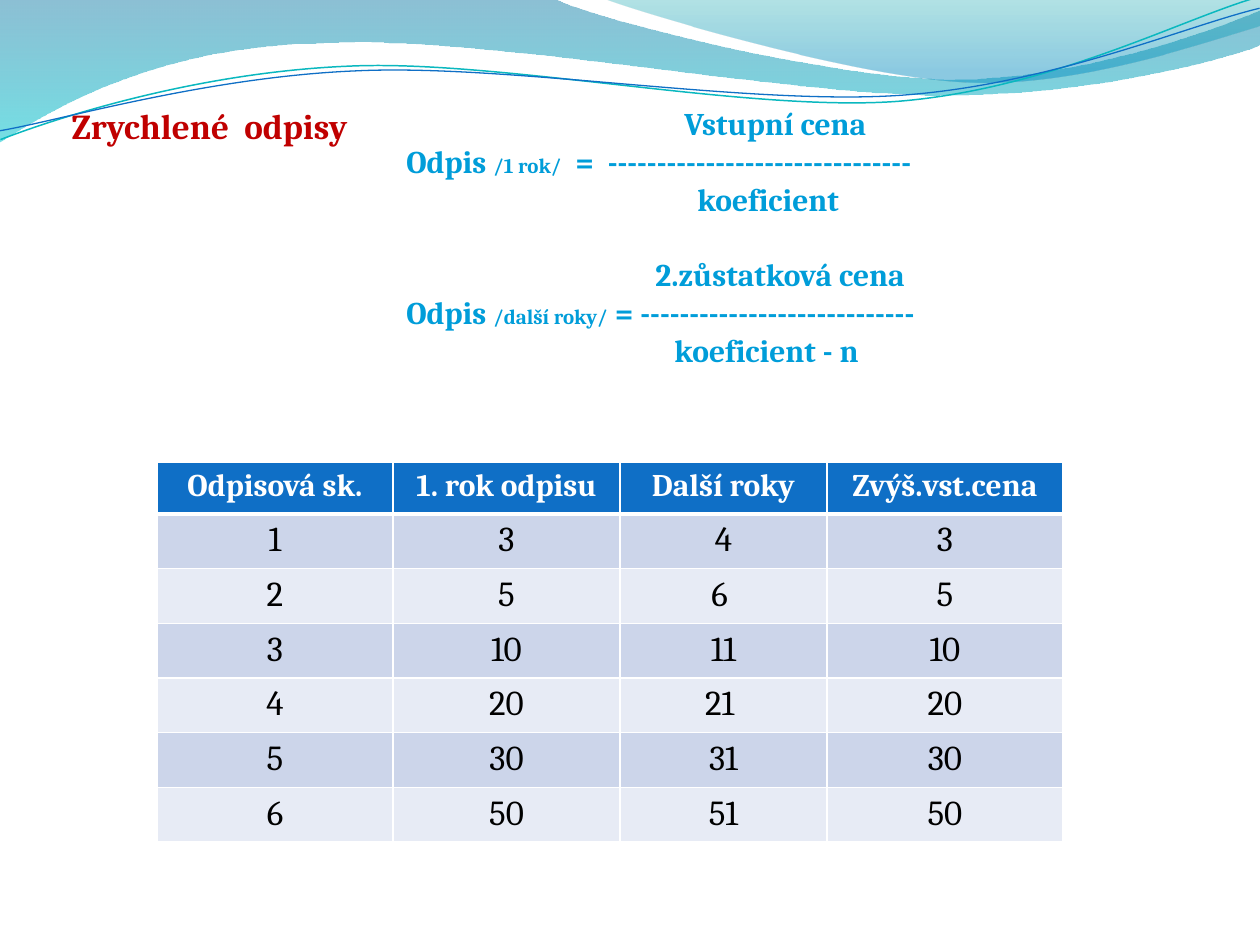
from lxml.etree import SubElement
from pptx import Presentation
from pptx.dml.color import RGBColor
from pptx.enum.text import MSO_ANCHOR, MSO_AUTO_SIZE, PP_ALIGN
from pptx.oxml.ns import qn
from pptx.util import Pt

FONT = "Cambria"
WHITE, BLACK, RED, AZURE, BLUE = "FFFFFF", "000000", "C00000", "009DD9", "0F6FC6"
BANDS = ("CCD5EA", "E7EBF5")

# Each step is one point (straight) or three points (Bezier curve).
BANNERS = [
    {"steps": [[(0, 0)], [(554, -1)],
               [(600, 21), (837, 79), (955, 79)], [(1075, 79), (1207, 33), (1260, 11)],
               [(1261, 45)],
               [(1239, 55), (1096, 96), (940, 95)], [(784, 95), (481, 35), (324, 43)],
               [(163, 45), (58, 105), (-1, 142)], [(0, 0)]],
     "stops": [(0, "0074A1", 45), (1, "00C6CF", 55)]},
    {"steps": [[(604, -1)],
               [(642, 14), (859, 78), (969, 82)], [(1079, 87), (1211, 40), (1260, 26)],
               [(1260, 0)], [(604, -1)]],
     "stops": [(0, "00A1A9", 30), (0.8, "008BBF", 45)]},
]
WAVE_LINES = [
    {"steps": [[(-2, 110)], [(58, 90), (199, 52), (350, 53)],
               [(499, 53), (745, 118), (896, 114)], [(1049, 109), (1184, 45), (1260, 27)]],
     "color": "0AB8BF", "width": 0.85},
    {"steps": [[(-2, 101)], [(57, 94), (207, 57), (357, 58)],
               [(509, 58), (750, 112), (902, 108)], [(1052, 104), (1188, 52), (1262, 38)]],
     "color": BLUE, "width": 0.75},
]
WAVE_ROTATION = 357.3

TITLE = "Zrychlené  odpisy"
# Indent in px, space before in points, runs of (text, size)
FORMULAS = [
    (278, 0, [("Vstupní cena", 18)]),
    (0, 0, [("Odpis ", 18), ("/1 rok/", 12), ("  =  " + "-" * 31, 18)]),
    (291, 0, [("koeficient", 18)]),
    (249, 21.6, [("2.zůstatková cena", 18)]),
    (0, 0, [("Odpis ", 18), ("/další roky/", 12), (" = " + "-" * 28, 18)]),
    (268, 0, [("koeficient - n", 18)]),
]

HEADER = ["Odpisová sk.", "1. rok odpisu", "Další roky", "Zvýš.vst.cena"]
COEFFICIENTS = [
    ("1", "3", "4", "3"),
    ("2", "5", "6 ", "5"),
    ("3", "10", "11", "10"),
    ("4", "20", "21 ", "20"),
    ("5", "30", "31", "30"),
    ("6", "50", "51", "50"),
]
COLUMN_WIDTHS = (236, 227, 207, 236)
HEADER_HEIGHT, ROW_HEIGHT = 52, 54


def px(value):
    return round(value * 914400 / 126)


def rgb(color):
    return RGBColor.from_string(color)


def style(run, size, color, bold=True):
    run.font.name, run.font.size, run.font.bold = FONT, Pt(size), bold
    run.font.color.rgb = rgb(color)


def add_outline(slide, steps, close):
    """Build a freeform, then merge the points of each three-point step into a curve."""
    start, *others = [(px(x), px(y)) for step in steps for x, y in step]
    builder = slide.shapes.build_freeform(*start)
    builder.add_line_segments(others, close=close)
    shape = builder.convert_to_shape()
    shape.shadow.inherit = False
    segments = iter(shape.element.xpath(".//a:path/a:lnTo"))
    for step in steps[1:]:
        first, *rest = [next(segments) for _ in step]
        if rest:
            curve = first.makeelement(qn("a:cubicBezTo"))
            first.addprevious(curve)
            for segment in (first, *rest):
                curve.append(segment[0])
                segment.getparent().remove(segment)
    return shape


def add_banner(slide, steps, stops):
    shape = add_outline(slide, steps, close=True)
    shape.line.fill.background()
    shape.fill.gradient()
    shape.fill.gradient_angle = 270
    for stop, (position, color, _) in zip(shape.fill.gradient_stops, stops):
        stop.position, stop.color.rgb = position, rgb(color)
    colors = shape.element.xpath("./p:spPr//a:gs/a:srgbClr")
    for element, (_, _, opacity) in zip(colors, stops):
        SubElement(element, qn("a:alpha"), val=str(opacity * 1000))


def add_wave_line(slide, steps, color, width):
    shape = add_outline(slide, steps, close=False)
    shape.rotation = WAVE_ROTATION
    shape.fill.background()
    shape.line.color.rgb, shape.line.width = rgb(color), Pt(width)


def place_title(title):
    title.left, title.top, title.width, title.height = px(59), px(98), px(318), px(55)
    frame = title.text_frame
    frame.text = TITLE
    frame.word_wrap, frame.auto_size = True, MSO_AUTO_SIZE.NONE
    frame.vertical_anchor = MSO_ANCHOR.TOP
    frame.paragraphs[0].alignment = PP_ALIGN.LEFT
    style(frame.paragraphs[0].runs[0], 20, RED)
    title.element.getparent().append(title.element)  # in front of the waves


def add_formulas(slide):
    frame = slide.shapes.add_textbox(px(394), px(98), px(581), px(280)).text_frame
    frame.word_wrap = True
    for index, (indent, space, runs) in enumerate(FORMULAS):
        paragraph = frame.add_paragraph() if index else frame.paragraphs[0]
        paragraph.space_before = Pt(space)
        properties = paragraph._p.get_or_add_pPr()
        properties.set("marL", str(px(indent)))
        properties.set("indent", "0")
        for text, size in runs:
            run = paragraph.add_run()
            run.text = text
            style(run, size, AZURE)


def set_borders(cell, top, bottom):
    properties = cell._tc.get_or_add_tcPr()
    for side, width in (("L", 1), ("R", 1), ("T", top), ("B", bottom)):
        line = SubElement(properties, qn(f"a:ln{side}"), w=str(Pt(width)))
        SubElement(SubElement(line, qn("a:solidFill")), qn("a:srgbClr"), val=WHITE)


def add_coefficients(slide):
    rows = [HEADER, *COEFFICIENTS]
    height = HEADER_HEIGHT + ROW_HEIGHT * len(COEFFICIENTS)
    table = slide.shapes.add_table(len(rows), len(HEADER), px(157), px(462),
                                   px(sum(COLUMN_WIDTHS)), px(height)).table
    for column, width in zip(table.columns, COLUMN_WIDTHS):
        column.width = px(width)
    for r, values in enumerate(rows):
        is_header = r == 0
        table.rows[r].height = px(HEADER_HEIGHT if is_header else ROW_HEIGHT)
        for c, value in enumerate(values):
            cell = table.cell(r, c)
            set_borders(cell, top=3 if r == 1 else 1, bottom=3 if is_header else 1)
            cell.fill.solid()
            cell.fill.fore_color.rgb = rgb(BLUE if is_header else BANDS[(r - 1) % 2])
            cell.text = value
            paragraph = cell.text_frame.paragraphs[0]
            paragraph.alignment = PP_ALIGN.CENTER
            style(paragraph.runs[0], 18 if is_header else 20,
                  WHITE if is_header else BLACK, bold=is_header)


def main():
    presentation = Presentation()
    presentation.slide_width, presentation.slide_height = px(1260), px(945)
    slide = presentation.slides.add_slide(presentation.slide_layouts[5])
    for banner in BANNERS:
        add_banner(slide, **banner)
    for wave_line in WAVE_LINES:
        add_wave_line(slide, **wave_line)
    place_title(slide.shapes.title)
    add_formulas(slide)
    add_coefficients(slide)
    presentation.save("out.pptx")


if __name__ == "__main__":
    main()
